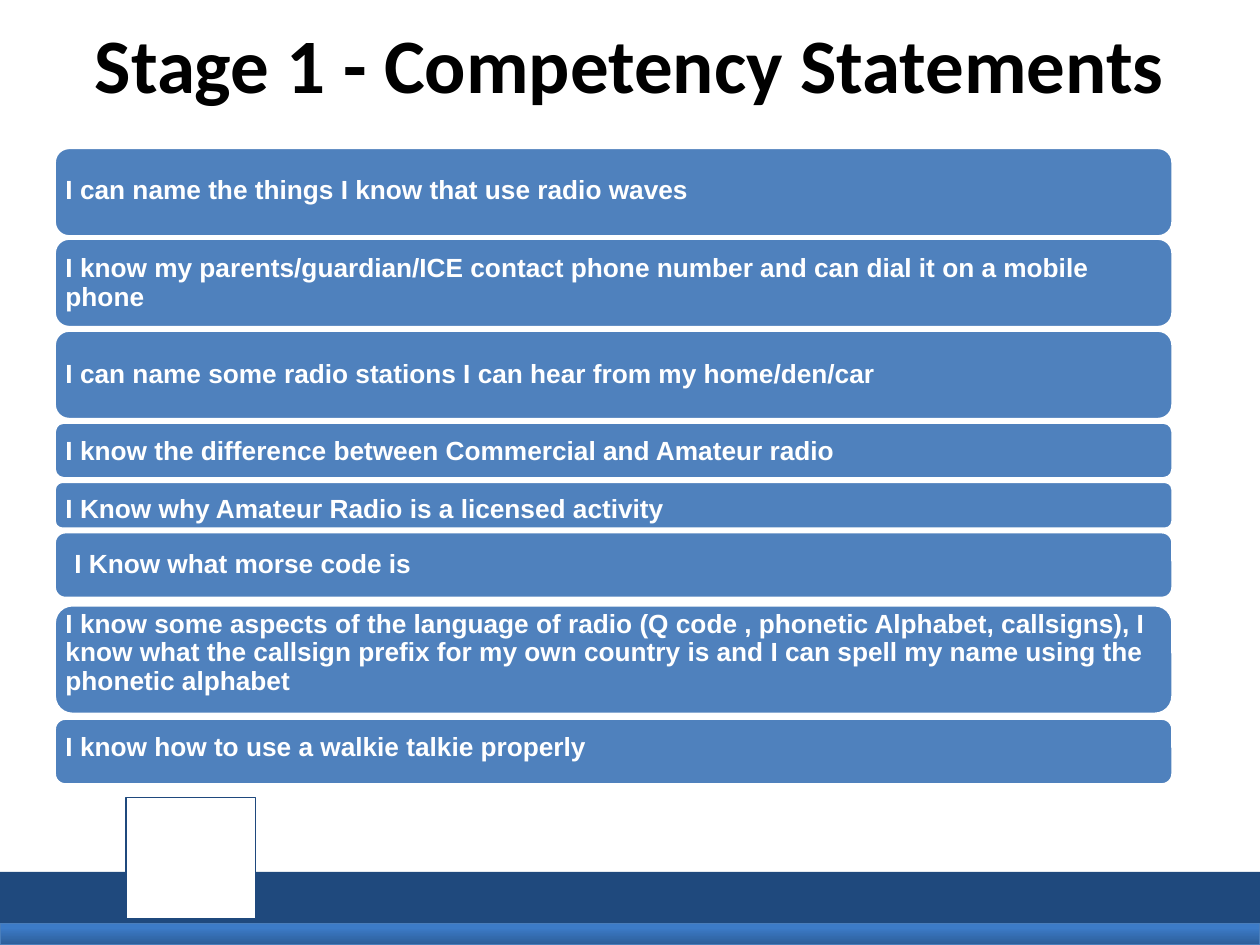
import pptx
import pptx.dml.color
import pptx.enum.shapes
import pptx.enum.text
import pptx.util

Inches = pptx.util.Inches
Pt = pptx.util.Pt
RGBColor = pptx.dml.color.RGBColor
MSO_SHAPE = pptx.enum.shapes.MSO_SHAPE
PP_ALIGN = pptx.enum.text.PP_ALIGN
MSO_ANCHOR = pptx.enum.text.MSO_ANCHOR

WHITE = RGBColor(0xFF, 0xFF, 0xFF)
BLACK = RGBColor(0x00, 0x00, 0x00)
NAVY = RGBColor(0x1F, 0x49, 0x7D)
PANEL_BLUE = RGBColor(0x4F, 0x81, 0xBD)
STRIP_LINE = RGBColor(0x4A, 0x7E, 0xBB)
STRIP_TOP = RGBColor(0x3C, 0x7B, 0xC7)
STRIP_BOTTOM = RGBColor(0x2C, 0x5D, 0x98)

prs = pptx.Presentation()
prs.slide_width = Inches(10)
prs.slide_height = Inches(7.5)
s = prs.slides.add_slide(prs.slide_layouts[6])


def add_box(kind, left, top, width, height, fill, line=None, line_width=0.75):
    sp = s.shapes.add_shape(kind, Inches(left), Inches(top), Inches(width), Inches(height))
    sp.shadow.inherit = False
    sp.fill.solid()
    sp.fill.fore_color.rgb = fill
    if line is None:
        sp.line.fill.background()
    else:
        sp.line.color.rgb = line
        sp.line.width = Pt(line_width)
    return sp


def add_text(text, left, top, width, height, font, size, color, inset_x, inset_y):
    tb = s.shapes.add_textbox(Inches(left), Inches(top), Inches(width), Inches(height))
    tf = tb.text_frame
    tf.word_wrap = True
    tf.vertical_anchor = MSO_ANCHOR.MIDDLE
    tf.margin_left = tf.margin_right = Inches(inset_x)
    tf.margin_top = tf.margin_bottom = Inches(inset_y)
    p = tf.paragraphs[0]
    p.text = text
    p.font.name = font
    p.font.size = Pt(size)
    p.font.bold = True
    p.font.color.rgb = color
    return p


# Footer bands and the empty frame standing on them
add_box(MSO_SHAPE.RECTANGLE, 0, 6.92, 10, 0.42, NAVY)
strip = add_box(MSO_SHAPE.RECTANGLE, 0, 7.33, 10, 0.17, STRIP_TOP, STRIP_LINE)
strip.fill.gradient()
strip.fill.gradient_angle = 270
for stop, color, position in zip(strip.fill.gradient_stops, (STRIP_TOP, STRIP_BOTTOM), (0.2, 1)):
    stop.color.rgb = color
    stop.position = position
add_box(MSO_SHAPE.RECTANGLE, 1, 6.33, 1.03, 0.96, WHITE, NAVY)

title = add_text("Stage 1 - Competency Statements", 0, 0, 10, 1, "Calibri", 44, BLACK, 0.1, 0.05)
title.alignment = PP_ALIGN.CENTER

# Statement, panel top and height, text left, top and height
statements = [
    ("I can name the things I know that use radio waves", 1.17, 0.71, 0.46, 1.2, 0.64),
    ("I know my parents/guardian/ICE contact phone number and can dial it on a mobile phone",
     1.89, 0.71, 0.46, 1.93, 0.64),
    ("I can name some radio stations I can hear from my home/den/car", 2.62, 0.71, 0.46, 2.66, 0.64),
    ("I know the difference between Commercial and Amateur radio", 3.35, 0.45, 0.46, 3.38, 0.42),
    ("I Know why Amateur Radio is a licensed activity", 3.82, 0.38, 0.46, 3.86, 0.38),
    ("I know some aspects of the language of radio (Q code , phonetic Alphabet, callsigns), "
     "I know what the callsign prefix for my own country is and I can spell my name using "
     "the phonetic alphabet", 4.8, 0.87, 0.46, 4.92, 0.53),
    ("I know how to use a walkie talkie properly", 5.7, 0.53, 0.46, 5.67, 0.53),
    ("I Know what morse code is", 4.22, 0.53, 0.53, 4.29, 0.38),
]
for text, top, height, text_left, text_top, text_height in statements:
    add_box(MSO_SHAPE.ROUNDED_RECTANGLE, 0.43, top, 8.88, height, PANEL_BLUE, WHITE, 2)
    p = add_text(text, text_left, text_top, 8.82, text_height, "Arial", 15, WHITE, 0.06, 0.06)
    p.alignment = PP_ALIGN.LEFT
    p.line_spacing = 0.9

prs.save("out.pptx")
